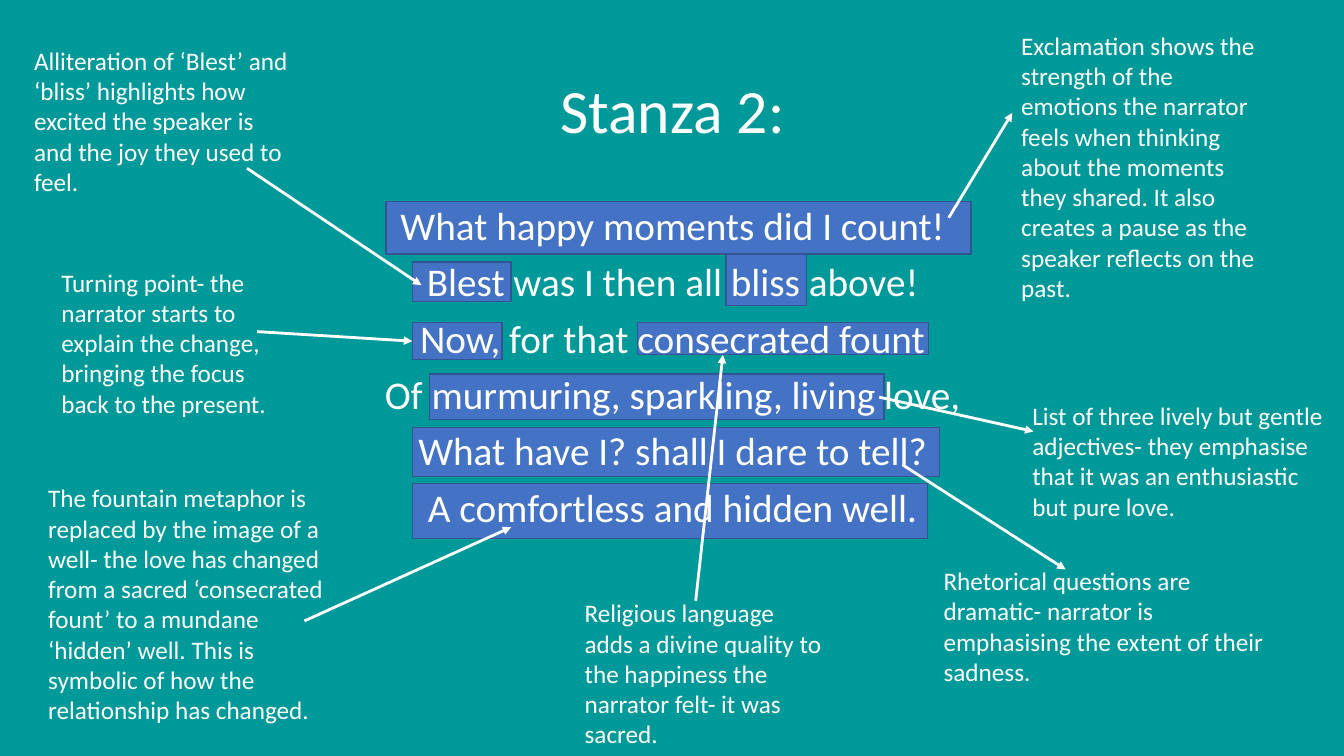
from lxml.etree import SubElement
from pptx import Presentation
from pptx.dml.color import RGBColor
from pptx.enum.shapes import MSO_CONNECTOR, MSO_SHAPE
from pptx.enum.text import MSO_ANCHOR, MSO_AUTO_SIZE, PP_ALIGN
from pptx.oxml.ns import qn
from pptx.util import Inches, Pt

TEAL = RGBColor(0x00, 0x99, 0x99)
BLUE = RGBColor(0x44, 0x72, 0xC4)
EDGE = RGBColor(0x32, 0x54, 0x91)
WHITE = RGBColor(0xFF, 0xFF, 0xFF)

TITLE = "Stanza 2:"
POEM = [
    "What happy moments did I count!",
    "Blest was I then all bliss above!",
    "Now, for that consecrated fount",
    "Of murmuring, sparkling, living love,",
    "What have I? shall I dare to tell?",
    "A comfortless and hidden well.",
]
# Highlighted words: left, top, width, height
MARKS = {
    "blest": (4.09, 2.6, 0.98, 0.39),
    "bliss": (7.2, 2.52, 0.8, 0.51),
    "moments": (3.83, 2, 5.8, 0.52),
    "now": (4.09, 3.2, 0.89, 0.37),
    "fount": (6.32, 3.2, 2.89, 0.32),
    "list": (4.26, 3.71, 4.51, 0.45),
    "question": (4.09, 4.24, 5.23, 0.49),
    "well": (4.09, 4.8, 5.11, 0.54),
}
# Note text, its box, arrow start, arrow end, mark joined at its left side
NOTES = [
    ("Exclamation shows the strength of the emotions the narrator feels when "
     "thinking about the moments they shared. It also creates a pause as the "
     "speaker reflects on the past.",
     (10.03, 0.25, 2.68, 2.83), (9.41, 2.16), (10.04, 1.12), None),
    ("Alliteration of ‘Blest’ and ‘bliss’ highlights how excited the speaker "
     "is and the joy they used to feel.",
     (0.24, 0.4, 2.75, 1.62), (2.45, 1.67), (4.18, 2.83), None),
    ("Turning point- the narrator starts to explain the change, bringing the "
     "focus back to the present.",
     (0.51, 2.6, 2.25, 1.62), (2.55, 3.29), (4.09, 3.38), "now"),
    ("List of three lively but gentle adjectives- they emphasise that it was "
     "an enthusiastic but pure love.",
     (10.14, 3.92, 3.11, 1.31), (8.72, 3.94), (10.25, 4.28), None),
    ("Rhetorical questions are dramatic- narrator is emphasising the extent "
     "of their sadness.",
     (9.26, 5.56, 3.45, 1.31), (8.95, 4.61), (10.57, 5.65), None),
    ("The fountain metaphor is replaced by the image of a well- the love has "
     "changed from a sacred ‘consecrated fount’ to a mundane ‘hidden’ well. "
     "This is symbolic of how the relationship has changed.",
     (0.38, 4.74, 3.17, 2.52), (3.02, 6.16), (5.07, 5.23), None),
    ("Religious language adds a divine quality to the happiness the narrator "
     "felt- it was sacred.",
     (5.7, 5.88, 2.58, 1.62), (6.9, 5.96), (7.17, 3.52), None),
]
VERSE = {"alignment": PP_ALIGN.CENTER, "line_spacing": 0.9}


def inches(nums):
    return [Inches(n) for n in nums]


def put(item, values):
    for name, value in values.items():
        setattr(item, name, value)


def write(frame, lines, size, style, gap=0):
    """Fill a text frame, with gap points between its paragraphs."""
    frame.word_wrap = True
    for i, line in enumerate(lines):
        para = frame.paragraphs[0] if i == 0 else frame.add_paragraph()
        para.text = line
        put(para, {**style, "space_before": Pt(gap if i else 0)})
        put(para.font, {"name": "Calibri", "size": Pt(size)})
        para.font.color.rgb = WHITE


def add_mark(shapes, box):
    mark = shapes.add_shape(MSO_SHAPE.RECTANGLE, *inches(box))
    mark.shadow.inherit = False
    mark.fill.solid()
    mark.fill.fore_color.rgb = BLUE
    mark.line.color.rgb = EDGE
    mark.line.width = Pt(1)
    return mark


def add_arrow(shapes, start, end, mark):
    arrow = shapes.add_connector(MSO_CONNECTOR.STRAIGHT, *inches(start + end))
    if mark is not None:
        arrow.end_connect(mark, 1)
    arrow.line.color.rgb = WHITE
    arrow.line.width = Pt(2)
    SubElement(arrow.line._get_or_add_ln(), qn("a:tailEnd"), type="triangle")
    SubElement(arrow._element.spPr, qn("a:effectLst"))


def main():
    deck = Presentation()
    deck.slide_width, deck.slide_height = inches((13.33, 7.5))
    slide = deck.slides.add_slide(deck.slide_layouts[5])
    slide.background.fill.solid()
    slide.background.fill.fore_color.rgb = TEAL
    shapes = slide.shapes

    title = shapes.title
    place = inches((0.92, 0.4, 11.5, 1.45))
    put(title, dict(zip(("left", "top", "width", "height"), place)))
    title.text_frame.vertical_anchor = MSO_ANCHOR.MIDDLE
    write(title.text_frame, [TITLE], 44, VERSE)

    marks = {name: add_mark(shapes, box) for name, box in MARKS.items()}
    poem = shapes.add_textbox(*inches((0.92, 2, 11.5, 4.76)))
    write(poem.text_frame, POEM, 28, VERSE, gap=10)

    for text, box, start, end, name in NOTES:
        note = shapes.add_textbox(*inches(box))
        write(note.text_frame, [text], 18, {"alignment": PP_ALIGN.LEFT})
        note.text_frame.auto_size = MSO_AUTO_SIZE.SHAPE_TO_FIT_TEXT
        add_arrow(shapes, start, end, marks.get(name))

    deck.save("out.pptx")


if __name__ == "__main__":
    main()
